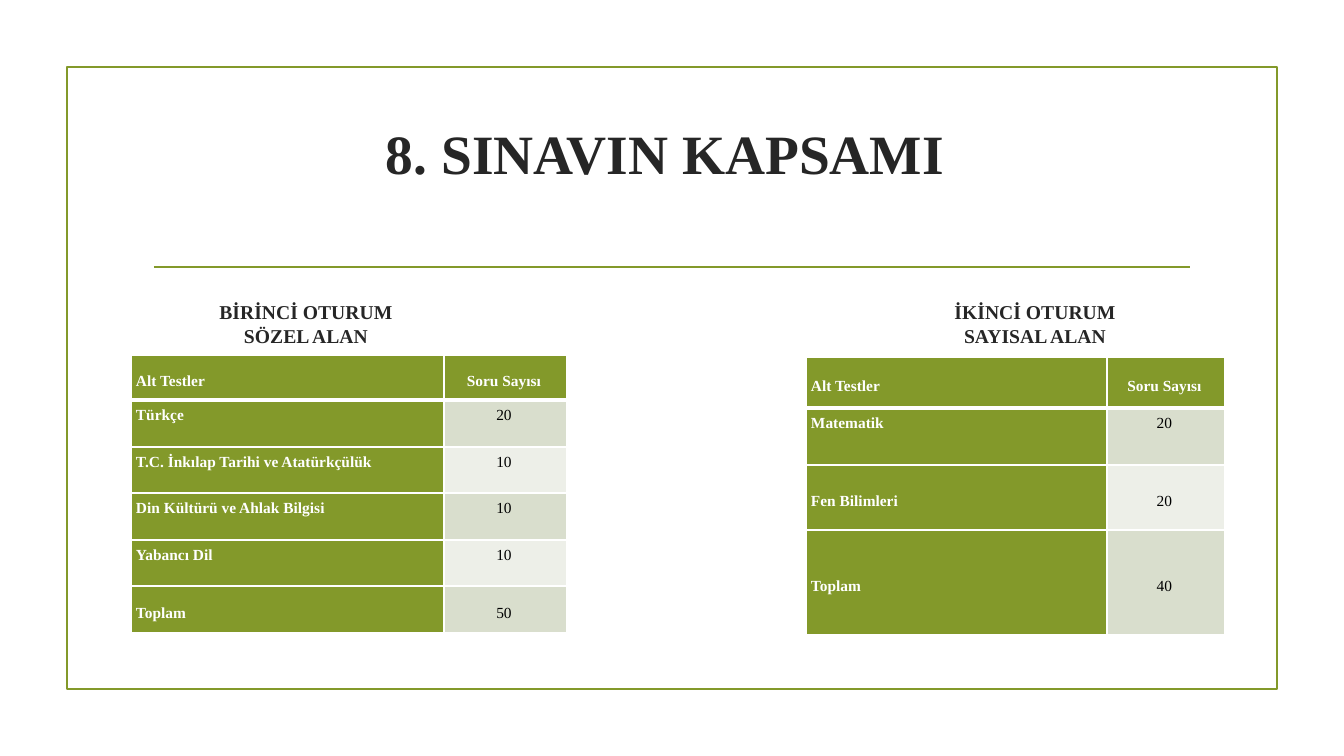
"""Build the exam scope slide with its two session tables."""
from lxml import etree
from pptx import Presentation, util as u
from pptx.dml.color import RGBColor
from pptx.enum import shapes, text
from pptx.oxml import ns

GREEN = RGBColor(0x83, 0x99, 0x2A)
DARK = RGBColor(0x26, 0x26, 0x26)
BLACK = RGBColor(0, 0, 0)
WHITE = RGBColor(0xFF, 0xFF, 0xFF)
BANDS = [RGBColor(0xED, 0xEF, 0xE8), RGBColor(0xD9, 0xDE, 0xCD)]
TOP, MIDDLE = text.MSO_ANCHOR.TOP, text.MSO_ANCHOR.MIDDLE
CENTER, LEFT = text.PP_ALIGN.CENTER, text.PP_ALIGN.LEFT


def px(*lengths):
    return [u.Emu(round(length * 914400 / 100.8)) for length in lengths]


def write(frame, lines, size, color, bold, anchor, align, insets=(0, 0, 0, 0), spacing=1.0):
    sides = ("margin_left", "margin_top", "margin_right", "margin_bottom")
    for side, inset in zip(sides, px(*insets)):
        setattr(frame, side, inset)
    frame.vertical_anchor = anchor
    body = getattr(frame, "text_frame", frame)
    body.word_wrap = True
    body.text = "\n".join(lines)
    font_format = {"name": "Times New Roman", "size": u.Pt(size), "bold": bold}
    for paragraph in body.paragraphs:
        paragraph.alignment = align
        paragraph.line_spacing = spacing
        font = paragraph.runs[0].font
        font.color.rgb = color
        for name, value in font_format.items():
            setattr(font, name, value)


presentation = Presentation()
presentation.slide_width, presentation.slide_height = px(1344, 756)
slide = presentation.slides.add_slide(presentation.slide_layouts[6])

border = slide.shapes.add_shape(shapes.MSO_SHAPE.RECTANGLE, *px(67, 67, 1210, 622))
border.shadow.inherit = False
border.fill.background()

divider = slide.shapes.add_connector(shapes.MSO_CONNECTOR.STRAIGHT, *px(154, 267, 1190, 267))
etree.SubElement(divider._element.spPr, ns.qn("a:effectLst"))

for shape in (border, divider):
    shape.line.color.rgb = GREEN
    shape.line.width = u.Pt(1.25)

texts = [
    (["8. SINAVIN KAPSAMI"], (136, 112, 1058, 80), 39.6, MIDDLE),
    (["BİRİNCİ OTURUM", "SÖZEL ALAN"], (206, 300, 200, 46), 14, TOP),
    (["İKİNCİ OTURUM", "SAYISAL ALAN"], (935, 300, 200, 46), 14, TOP),
]
for lines, place, size, anchor in texts:
    box = slide.shapes.add_textbox(*px(*place))
    write(box.text_frame, lines, size, DARK, True, anchor, CENTER)

header = ("Alt Testler", "Soru Sayısı")
tables = [
    ((131, 355), (313, 123), [
        (*header, 45, MIDDLE),
        ("Türkçe", "20", 47, TOP),
        ("T.C. İnkılap Tarihi ve Atatürkçülük", "10", 46, TOP),
        ("Din Kültürü ve Ahlak Bilgisi", "10", 47, TOP),
        ("Yabancı Dil", "10", 46, TOP),
        ("Toplam", "50", 47, MIDDLE),
    ]),
    ((806, 357), (301, 118), [
        (*header, 51, MIDDLE),
        ("Matematik", "20", 57, TOP),
        ("Fen Bilimleri", "20", 65, MIDDLE),
        ("Toplam", "40", 105, MIDDLE),
    ]),
]
for corner, widths, rows in tables:
    extent = (sum(widths), sum(row[2] for row in rows))
    table = slide.shapes.add_table(len(rows), len(widths), *px(*corner, *extent)).table
    for column, width in zip(table.columns, px(*widths)):
        column.width = width
    for row_index, (label, value, height, anchor) in enumerate(rows):
        table.rows[row_index].height = px(height)[0]
        for column_index, content in enumerate((label, value)):
            cell = table.cell(row_index, column_index)
            properties = cell._tc.get_or_add_tcPr()
            for side in ("lnL", "lnR", "lnT", "lnB"):
                thick = (row_index, side) in ((0, "lnB"), (1, "lnT"))
                edge = etree.SubElement(properties, ns.qn(f"a:{side}"), w=str(u.Pt(3 if thick else 1)))
                fill = etree.SubElement(edge, ns.qn("a:solidFill"))
                etree.SubElement(fill, ns.qn("a:srgbClr"), val=str(WHITE))
            strong = row_index == 0 or column_index == 0
            cell.fill.solid()
            cell.fill.fore_color.rgb = GREEN if strong else BANDS[row_index % 2]
            write(cell, [content], 11, WHITE if strong else BLACK, strong, anchor,
                  CENTER if column_index else LEFT, (5, 6, 8, 0), 1.07)

presentation.save("out.pptx")
